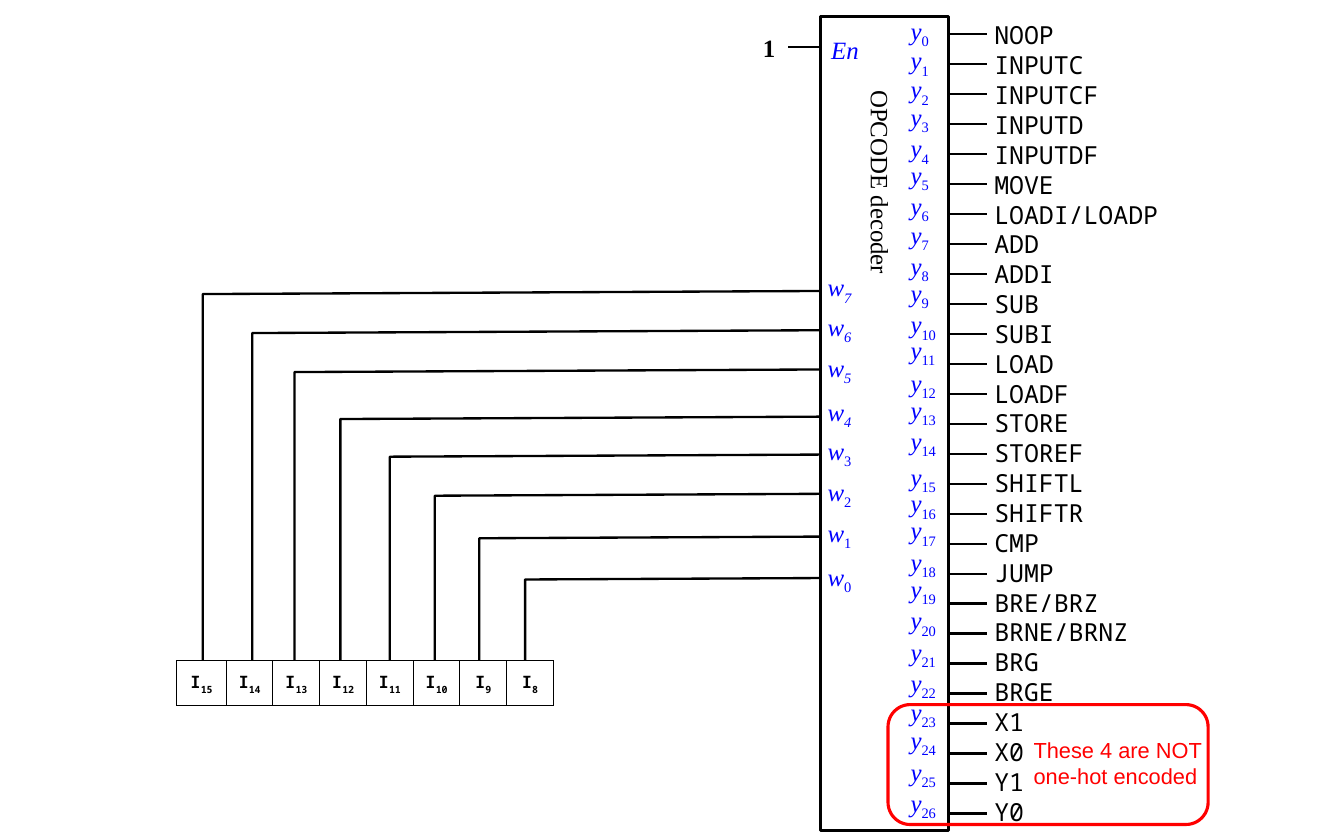
from lxml import etree
from pptx import Presentation
from pptx.dml.color import RGBColor
from pptx.enum.shapes import MSO_CONNECTOR, MSO_SHAPE
from pptx.enum.text import MSO_ANCHOR, PP_ALIGN
from pptx.oxml.ns import qn
from pptx.util import Cm, Pt

STRAIGHT = MSO_CONNECTOR.STRAIGHT
RECTANGLE, ROUNDED = MSO_SHAPE.RECTANGLE, MSO_SHAPE.ROUNDED_RECTANGLE
MIDDLE, CENTER = MSO_ANCHOR.MIDDLE, PP_ALIGN.CENTER
BLACK, BLUE, RED = "000000", "0000FF", "FF0000"

SIGNAL = {"name": "Times New Roman", "size": Pt(16), "italic": True}
SIGNAL_INDEX = {**SIGNAL, "italic": False}
PLAIN = SIGNAL_INDEX
CONSTANT = {**PLAIN, "bold": True}
MNEMONIC = {"name": "Noto Sans Mono", "size": Pt(16)}
BIT = {"name": "Noto Sans Mono", "size": Pt(11), "bold": True}
REMARK = {"name": "Arial", "size": Pt(14)}


def add_run(paragraph, text, style, colour, subscript=False):
    run = paragraph.add_run()
    run.text = text
    for attribute, value in style.items():
        setattr(run.font, attribute, value)
    run.font.color.rgb = RGBColor.from_string(colour)
    if subscript:
        run._r.get_or_add_rPr().set("baseline", "-25000")


def add_label(left, top, width, height, text, style, colour, inset=0):
    label = slide.shapes.add_textbox(Cm(left), Cm(top), Cm(width), Cm(height))
    frame = label.text_frame
    frame.word_wrap = False
    for side in ("left", "right"):
        setattr(frame, f"margin_{side}", Cm(inset))
    for side in ("top", "bottom"):
        setattr(frame, f"margin_{side}", Cm(inset / 2))
    for number, line in enumerate(text.split("\n")):
        paragraph = frame.add_paragraph() if number else frame.paragraphs[0]
        add_run(paragraph, line, style, colour)
    return label


presentation = Presentation()
presentation.slide_width, presentation.slide_height = Cm(30.48), Cm(19.05)
slide = presentation.slides.add_slide(presentation.slide_layouts[6])

outlines = [
    (RECTANGLE, 18.61, 0.37, 2.9, 18.47, BLACK, 2.25),
    (ROUNDED, 20.14, 15.98, 7.26, 2.72, RED, 2),
]
for kind, left, top, width, height, colour, weight in outlines:
    outline = slide.shapes.add_shape(kind, Cm(left), Cm(top), Cm(width), Cm(height))
    outline.shadow.inherit = False
    outline.fill.background()
    outline.line.color.rgb = RGBColor.from_string(colour)
    outline.line.width = Pt(weight)
    if kind == ROUNDED:
        outline.adjustments[0] = 0.185

add_label(18.85, 0.79, 0.64, 0.69, "En", SIGNAL, BLUE)
add_label(17.3, 0.74, 0.43, 0.69, "1", CONSTANT, BLACK)
decoder_name = add_label(17.53, 4.14, 4.88, 0.69, "OPCODE decoder", PLAIN, BLACK)
decoder_name.rotation = 90

opcodes = """NOOP INPUTC INPUTCF INPUTD INPUTDF MOVE LOADI/LOADP ADD ADDI SUB SUBI
LOAD LOADF STORE STOREF SHIFTL SHIFTR CMP JUMP BRE/BRZ BRNE/BRNZ BRG BRGE
X1 X0 Y1 Y0""".split()
opcode_list = add_label(22.3, 0.33, 4.29, 18.6, "\n".join(opcodes), MNEMONIC, BLACK, 0.25)
for paragraph in opcode_list.text_frame.paragraphs:
    paragraph.line_spacing = Pt(19.2)

output_tops = [
    0.36, 1.02, 1.68, 2.31, 3.02, 3.61, 4.32, 4.98, 5.69,
    6.3, 7.01, 7.59, 8.33, 8.94, 9.65, 10.46, 11.07, 11.68,
    12.4, 13, 13.72, 14.43, 15.14, 15.8, 16.43, 17.15, 17.86,
]
for index, top in enumerate(output_tops):
    width = 0.61 if index < 10 else 0.81
    output = add_label(20.65, top, width, 0.69, "y", SIGNAL, BLUE)
    add_run(output.text_frame.paragraphs[0], str(index), SIGNAL_INDEX, BLUE, True)

stubs = [(21.51, 22.38, 0.77 + 0.68 * index) for index in range(len(opcodes))]
stubs.append((18.6, 17.86, 1.07))
for start, end, level in stubs:
    stub = slide.shapes.add_connector(STRAIGHT, Cm(start), Cm(level), Cm(end), Cm(level))
    stub.line.color.rgb = RGBColor.from_string(BLACK)
    stub.line.width = Pt(1.5)
    etree.SubElement(stub._element.spPr, qn("a:effectLst"))

inputs = [
    (7, 6.17, 6.6, 4.6),
    (6, 7.06, 7.49, 5.72),
    (5, 8, 8.38, 6.68),
    (4, 8.99, 9.45, 7.72),
    (3, 9.88, 10.31, 8.84),
    (2, 10.8, 11.2, 9.86),
    (1, 11.73, 12.17, 10.87),
    (0, 12.73, 13.11, 11.91),
]
chip_edge, register_top = 18.6, 14.98
for index, top, level, bit_x in inputs:
    signal = add_label(18.77, top, 0.74, 0.69, "w", SIGNAL, BLUE)
    index_style = SIGNAL if index > 3 else SIGNAL_INDEX
    add_run(signal.text_frame.paragraphs[0], str(index), index_style, BLUE, True)

    bend = level + 0.005 * (chip_edge - bit_x)
    builder = slide.shapes.build_freeform(Cm(chip_edge), Cm(level))
    builder.add_line_segments(
        [(Cm(bit_x), Cm(bend)), (Cm(bit_x), Cm(register_top))], close=False
    )
    wire = builder.convert_to_shape()
    wire.shadow.inherit = False
    wire.fill.background()
    wire.line.color.rgb = RGBColor.from_string(BLACK)
    wire.line.width = Pt(1.5)

add_label(23.19, 16.59, 4.47, 1.45, "These 4 are NOT\none-hot encoded", REMARK, RED, 0.25)

bits = range(15, 7, -1)
register = slide.shapes.add_table(
    1, len(bits), Cm(4.01), Cm(register_top), Cm(8.51), Cm(1.03)
).table
register.first_row = register.horz_banding = False
register.rows[0].height = Cm(1.03)
for column, bit in enumerate(bits):
    register.columns[column].width = Cm(1.06 if column else 1.12)
    cell = register.cell(0, column)
    cell.vertical_anchor = MIDDLE
    paragraph = cell.text_frame.paragraphs[0]
    paragraph.alignment = CENTER
    add_run(paragraph, "I", BIT, BLACK)
    add_run(paragraph, str(bit), BIT, BLACK, True)
    properties = cell._tc.get_or_add_tcPr()
    for side in ("lnL", "lnR", "lnT", "lnB"):
        border = etree.SubElement(properties, qn(f"a:{side}"), w=str(Pt(0.75)))
        solid = etree.SubElement(border, qn("a:solidFill"))
        etree.SubElement(solid, qn("a:srgbClr"), val=BLACK)
    cell.fill.background()

presentation.save("out.pptx")
